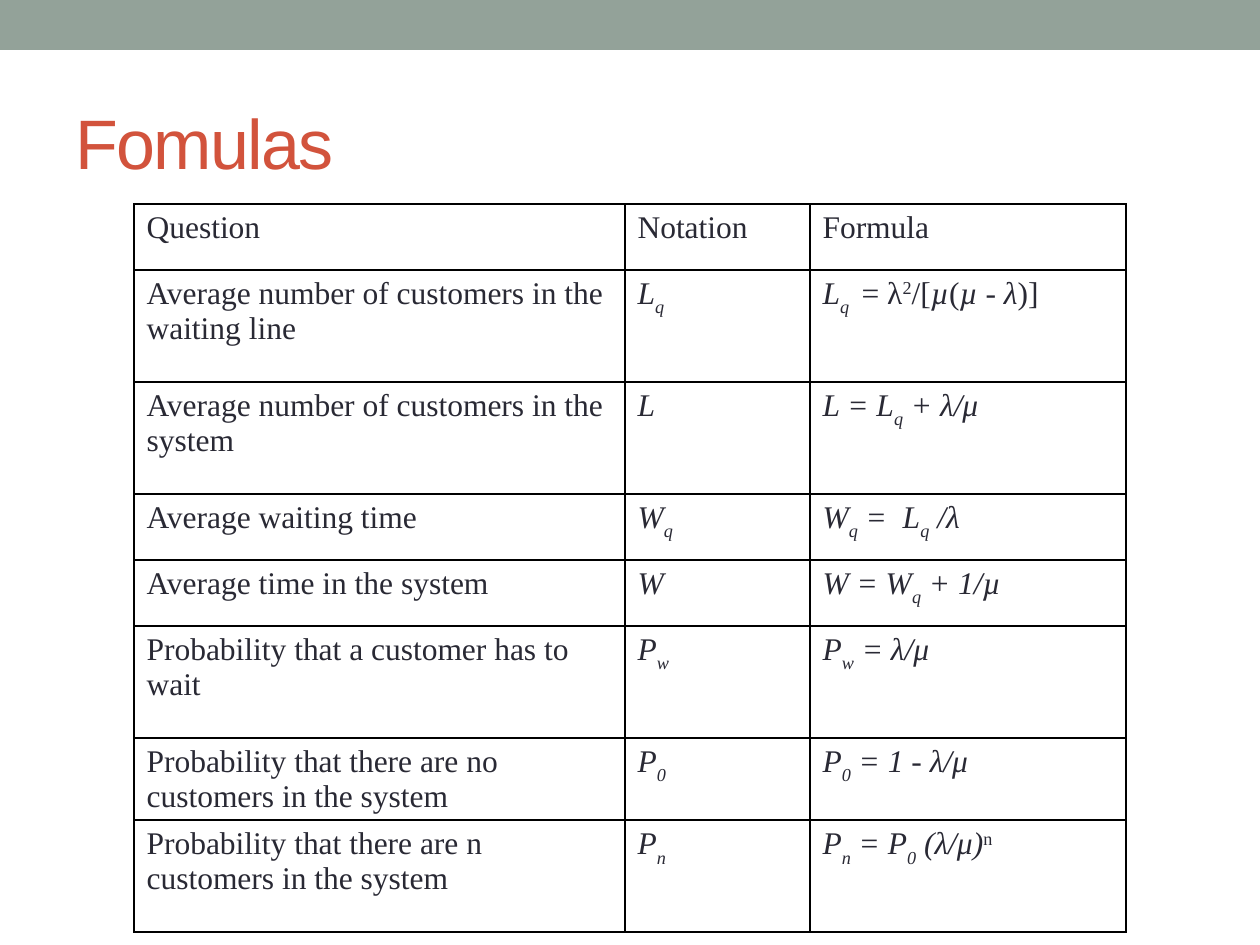
import dataclasses

import lxml.etree
import pptx
import pptx.dml.color
import pptx.enum.shapes
import pptx.enum.text
import pptx.oxml.ns
import pptx.util

PX = 914400 // 126


@dataclasses.dataclass(frozen=True)
class Theme:
    bar: str = "93A299"
    title: str = "D2533C"
    text: str = "292934"
    border: str = "000000"
    title_font: str = "Arial"
    table_font: str = "Times New Roman"
    title_size: int = 40
    table_size: int = 18
    title_spacing: int = -1
    border_width: int = 1


THEME = Theme()
SUB, SUP = -30, 30
COLUMN_WIDTHS = [491, 185, 316]
ROW_HEIGHTS = [66, 112, 112, 66, 66, 112, 82, 112]


def plain(text, baseline=0):
    return text, False, baseline


def italic(text, baseline=0):
    return text, True, baseline


def symbol(letter, index):
    return [italic(letter), italic(index, SUB)]


L_Q, W_Q, P_W, P_0, P_N = (symbol(*pair) for pair in ("Lq", "Wq", "Pw", "P0", "Pn"))

ROWS = [
    ("Question", [plain("Notation")], [plain("Formula")]),
    ("Average number of customers in the waiting line", L_Q,
     [italic("L"), italic("q ", SUB), plain(" = λ"), plain("2", SUP), plain("/["),
      italic("µ"), plain("("), italic("µ"), plain(" - "), italic("λ"), plain(")]")]),
    ("Average number of customers in the system", [italic("L")],
     [italic("L = "), *L_Q, italic(" + λ/μ")]),
    ("Average waiting time", W_Q, [*W_Q, italic(" =  "), *L_Q, italic(" /λ")]),
    ("Average time in the system", [italic("W")],
     [italic("W = "), *W_Q, italic(" + 1/µ")]),
    ("Probability that a customer has to wait", P_W, [*P_W, italic(" = λ/μ")]),
    ("Probability that there are no customers in the system", P_0,
     [*P_0, italic(" = 1 - λ/μ")]),
    ("Probability that there are n customers in the system", P_N,
     [*P_N, italic(" = "), *P_0, italic(" (λ/μ)"), plain("n", SUP)]),
]


def emu(*lengths):
    return [pptx.util.Emu(length * PX) for length in lengths]


def rgb(color):
    return pptx.dml.color.RGBColor.from_string(color)


def add_span(para, text, font, size, color):
    span = para.add_run()
    span.text = text
    span.font.name = font
    span.font.size = pptx.util.Pt(size)
    span.font.color.rgb = rgb(color)
    return span


def add_bar(page, box):
    bar = page.shapes.add_shape(pptx.enum.shapes.MSO_SHAPE.RECTANGLE, *emu(*box))
    bar.shadow.inherit = False
    bar.fill.solid()
    bar.fill.fore_color.rgb = rgb(THEME.bar)
    bar.line.fill.background()


def fill_title(page, box):
    title = page.shapes.title
    title.left, title.top, title.width, title.height = emu(*box)
    title.text_frame.vertical_anchor = pptx.enum.text.MSO_ANCHOR.MIDDLE
    para = title.text_frame.paragraphs[0]
    para.alignment = pptx.enum.text.PP_ALIGN.LEFT
    span = add_span(para, "Fomulas", THEME.title_font, THEME.title_size, THEME.title)
    span.font._element.set("spc", str(THEME.title_spacing * 100))


def set_borders(cell):
    properties = cell._tc.get_or_add_tcPr()
    for index, side in enumerate(("a:lnL", "a:lnR", "a:lnT", "a:lnB")):
        line = lxml.etree.Element(pptx.oxml.ns.qn(side))
        line.set("w", str(pptx.util.Pt(THEME.border_width)))
        fill = lxml.etree.SubElement(line, pptx.oxml.ns.qn("a:solidFill"))
        color = lxml.etree.SubElement(fill, pptx.oxml.ns.qn("a:srgbClr"))
        color.set("val", THEME.border)
        properties.insert(index, line)


def fill_cell(cell, spans):
    cell.fill.background()
    set_borders(cell)
    para = cell.text_frame.paragraphs[0]
    for text, is_italic, baseline in spans:
        span = add_span(para, text, THEME.table_font, THEME.table_size, THEME.text)
        span.font.italic = is_italic
        if baseline:
            span.font._element.set("baseline", str(baseline * 1000))


def add_formula_table(page, left, top):
    box = emu(left, top, sum(COLUMN_WIDTHS), sum(ROW_HEIGHTS))
    table = page.shapes.add_table(len(ROWS), len(COLUMN_WIDTHS), *box).table
    table.first_row = table.horz_banding = False
    for column, width in zip(table.columns, emu(*COLUMN_WIDTHS)):
        column.width = width
    for row, height, (question, notation, formula) in zip(
            table.rows, emu(*ROW_HEIGHTS), ROWS):
        row.height = height
        for cell, spans in zip(row.cells, ([plain(question)], notation, formula)):
            fill_cell(cell, spans)


def main():
    deck = pptx.Presentation()
    deck.slide_width, deck.slide_height = emu(1260, 945)
    page = deck.slides.add_slide(deck.slide_layouts.get_by_name("Title Only"))
    add_bar(page, (0, 0, 1260, 50))
    fill_title(page, (63, 73, 1134, 136))
    add_formula_table(page, 134, 204)
    deck.save("out.pptx")


if __name__ == "__main__":
    main()
